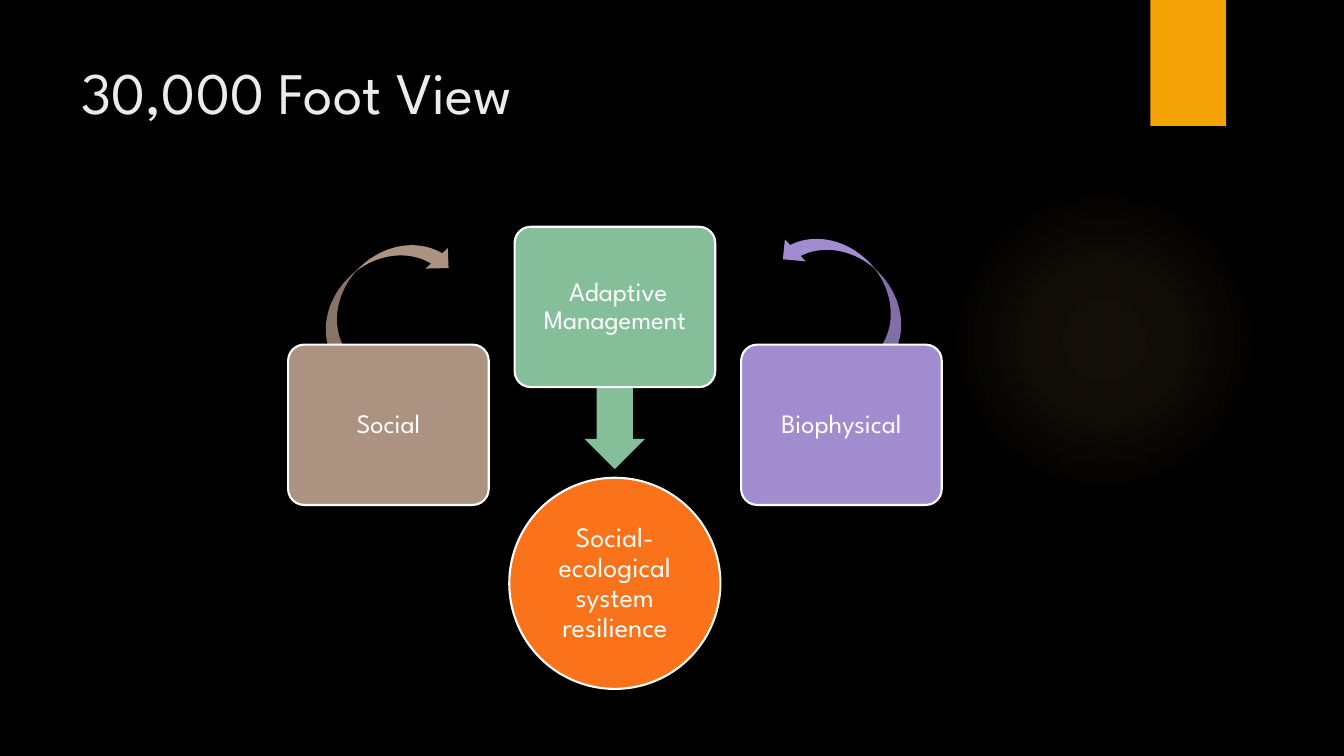
from lxml import etree
from pptx import Presentation
from pptx import util as u
from pptx.dml.color import RGBColor
from pptx.enum import shapes, text
from pptx.oxml import ns

FONT = "League Spartan"
WHITE, TAN, GREEN, PURPLE = "FFFFFF", "AB9281", "85BF9A", "A18CD0"
KIND = shapes.MSO_SHAPE


def color(value):
    return RGBColor.from_string(value)


def add_shape(kind, left, top, width, height, fill, label=None, size=19, inset=2.88):
    shape = slide.shapes.add_shape(kind, u.Pt(left), u.Pt(top), u.Pt(width), u.Pt(height))
    shape.shadow.inherit = False
    shape.fill.solid()
    shape.fill.fore_color.rgb = color(fill)
    shape.line.fill.background()
    if label:
        shape.line.color.rgb = color(WHITE)
        shape.line.width = u.Pt(1.5)
        frame = shape.text_frame
        frame.word_wrap = True
        frame.vertical_anchor = text.MSO_ANCHOR.MIDDLE
        frame.margin_left = frame.margin_right = u.Pt(inset)
        frame.margin_top = frame.margin_bottom = u.Pt(inset)
        paragraph = frame.paragraphs[0]
        paragraph.alignment = text.PP_ALIGN.CENTER
        paragraph.line_spacing = 0.9
        run = paragraph.add_run()
        run.text = label
        run.font.name = FONT
        run.font.size = u.Pt(size)
        run.font.color.rgb = color(WHITE)
    return shape


presentation = Presentation()
presentation.slide_width = u.Pt(960)
presentation.slide_height = u.Pt(540)
slide = presentation.slides.add_slide(presentation.slide_layouts[5])
slide.background.fill.solid()
slide.background.fill.fore_color.rgb = color("000000")

glow = add_shape(KIND.OVAL, 677.5, 131.8, 221.8, 221.8, "FAC96A")
stops = "".join(
    f'<a:gs pos="{position}000"><a:srgbClr val="FAC96A"><a:alpha val="{alpha}000"/></a:srgbClr></a:gs>'
    for position, alpha in ((0, 7), (36, 6), (69, 0))
)
gradient = etree.fromstring(
    f'<a:gradFill {ns.nsdecls("a")}><a:gsLst>{stops}</a:gsLst><a:path path="circle">'
    '<a:fillToRect l="50000" t="50000" r="50000" b="50000"/></a:path></a:gradFill>'
)
properties = glow._element.spPr
properties.replace(properties.find(ns.qn("a:solidFill")), gradient)

add_shape(KIND.RECTANGLE, 821.8, 0, 54, 90, "F5A408")

title = slide.shapes.title
title.left, title.top, title.width, title.height = u.Pt(51), u.Pt(36), u.Pt(741), u.Pt(110)
title.text_frame.word_wrap = True
title.text_frame.vertical_anchor = text.MSO_ANCHOR.TOP
paragraph = title.text_frame.paragraphs[0]
paragraph.alignment = text.PP_ALIGN.LEFT
run = paragraph.add_run()
run.text = "30,000 Foot View"
run.font.name = FONT
run.font.size = u.Pt(42)
run.font.color.rgb = color("EBEBEB")

add_shape(KIND.OVAL, 363.8, 341.3, 150.8, 150.8, "FA731A",
          "Social-ecological system resilience", 20, 0.72)

for kind, left, top, rotation, fill in (
    (KIND.CURVED_DOWN_ARROW, 213.1, 185.8, 317.5, TAN),
    (KIND.CURVED_UP_ARROW, 549.4, 182.9, 226.5, PURPLE),
):
    curved_arrow = add_shape(kind, left, top, 115.9, 43.2, fill)
    curved_arrow.rotation = rotation

down_arrow = add_shape(KIND.DOWN_ARROW, 417.6, 219.2, 43.2, 115.9, GREEN)
down_arrow.adjustments[0] = 0.6
down_arrow.adjustments[1] = 0.5

for column, (label, top, fill) in enumerate((
    ("Social", 246.2, TAN),
    (" Adaptive Management", 162, GREEN),
    ("Biophysical", 246.2, PURPLE),
)):
    box = add_shape(KIND.ROUNDED_RECTANGLE, 205.8 + 161.8 * column, top, 143.3, 114.5, fill, label)
    box.adjustments[0] = 0.1

presentation.save("out.pptx")
